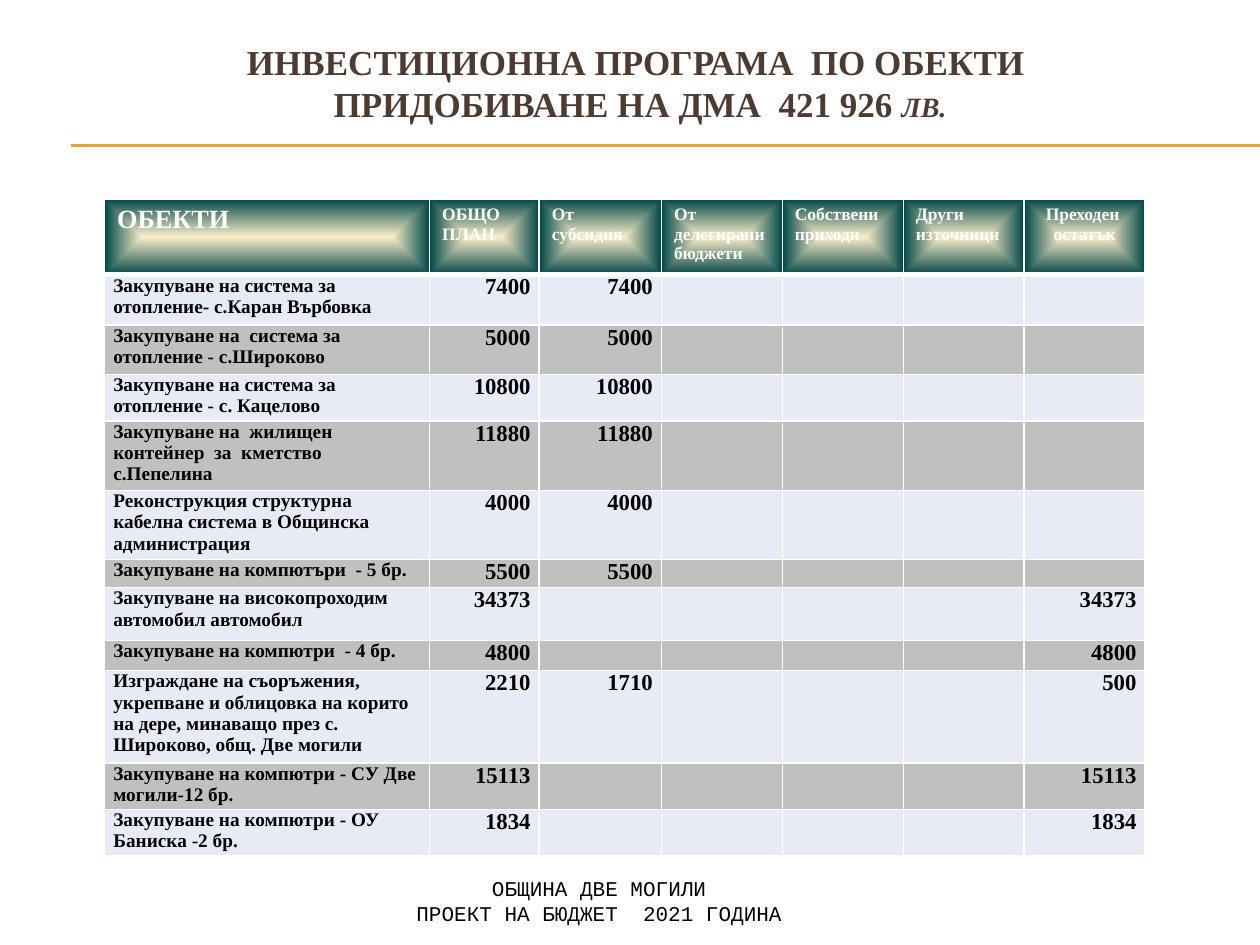
from lxml import etree
from pptx import Presentation
from pptx.dml.color import RGBColor
from pptx.enum.shapes import MSO_CONNECTOR
from pptx.enum.text import MSO_ANCHOR, MSO_AUTO_SIZE, PP_ALIGN
from pptx.oxml import parse_xml
from pptx.oxml.ns import nsdecls, qn
from pptx.util import Inches, Pt

STRAIGHT = MSO_CONNECTOR.STRAIGHT
MIDDLE, BOTTOM = MSO_ANCHOR.MIDDLE, MSO_ANCHOR.BOTTOM
NO_AUTOFIT = MSO_AUTO_SIZE.NONE
LEFT, CENTER, RIGHT = PP_ALIGN.LEFT, PP_ALIGN.CENTER, PP_ALIGN.RIGHT

WHITE = RGBColor(0xFF, 0xFF, 0xFF)
BLACK = RGBColor(0, 0, 0)
BROWN = RGBColor(0x4E, 0x3B, 0x30)
ORANGE = RGBColor(0xF0, 0xA2, 0x2E)
CREAM = RGBColor(0xFB, 0xEE, 0xC9)
TEAL = RGBColor(0x00, 0x47, 0x47)
PALE_BLUE = RGBColor(0xE7, 0xEB, 0xF5)
GRAY = RGBColor(0xC0, 0xC0, 0xC0)

SERIF = "Times New Roman"
MONO = "Courier New"

COLUMN_WIDTHS = [2.58, 0.87, 0.97] + [0.96] * 4
ROW_HEIGHTS = [0.57, 0.4, 0.39, 0.37, 0.33, 0.3, 0.22, 0.42, 0.24, 0.47, 0.24, 0.24]
HEADERS = [
    "ОБЕКТИ", "ОБЩО ПЛАН", "От субсидия", "От делегирани бюджети",
    "Собствени приходи", "Други източници", "Преходен  остатък",
]
PROJECTS = [
    ("Закупуване на система за отопление- с.Каран Върбовка", "7400", "7400", ""),
    ("Закупуване на  система за отопление - с.Широково", "5000", "5000", ""),
    ("Закупуване на система за отопление - с. Кацелово", "10800", "10800", ""),
    ("Закупуване на  жилищен контейнер  за  кметство  с.Пепелина", "11880", "11880", ""),
    ("Реконструкция структурна кабелна система в Общинска администрация", "4000", "4000", ""),
    ("Закупуване на компютъри  - 5 бр.", "5500", "5500", ""),
    ("Закупуване на високопроходим автомобил автомобил", "34373", "", "34373"),
    ("Закупуване на компютри  - 4 бр.", "4800", "", "4800"),
    ("Изграждане на съоръжения, укрепване и облицовка на корито на дере, "
     "минаващо през с. Широково, общ. Две могили", "2210", "1710", "500"),
    ("Закупуване на компютри - СУ Две могили-12 бр.", "15113", "", "15113"),
    ("Закупуване на компютри - ОУ Баниска -2 бр.", "1834", "", "1834"),
]


def add_span(para, text, size, color, font=SERIF, bold=True, italic=False):
    span = para.add_run()
    span.text = text
    span.font.name = font
    span.font.size = Pt(size)
    span.font.bold = bold
    span.font.italic = italic
    span.font.color.rgb = color


def set_margins(target, left, top, right, bottom):
    target.margin_left, target.margin_top = Inches(left), Inches(top)
    target.margin_right, target.margin_bottom = Inches(right), Inches(bottom)


def fill_title(page):
    title = page.shapes.title
    title.left, title.top = Inches(1.08), Inches(0.17)
    title.width, title.height = Inches(8), Inches(0.92)
    frame = title.text_frame
    frame.auto_size = NO_AUTOFIT
    frame.vertical_anchor = MIDDLE
    set_margins(frame, 0, 0.05, 0, 0)
    para = frame.paragraphs[0]
    para.alignment = CENTER
    add_span(para, "ИНВЕСТИЦИОННА ПРОГРАМА  ПО ОБЕКТИ ", 20, BROWN)
    para.add_line_break()
    add_span(para, "ПРИДОБИВАНЕ НА ДМА  421 926 ", 20, BROWN)
    add_span(para, "ЛВ.", 16, BROWN, italic=True)


def add_rule(page, top):
    rule = page.shapes.add_connector(
        STRAIGHT, Inches(0.56), Inches(top), Inches(10), Inches(top))
    rule.line.color.rgb = ORANGE
    rule.line.width = Pt(0.75)
    etree.SubElement(rule._element.spPr, qn("a:effectLst"))


def add_footer(page):
    box = page.shapes.add_textbox(Inches(2.92), Inches(6.95), Inches(3.67), Inches(0.4))
    frame = box.text_frame
    frame.word_wrap = True
    frame.vertical_anchor = BOTTOM
    set_margins(frame, 0, 0, 0, 0)
    for index, text in enumerate(["ОБЩИНА ДВЕ МОГИЛИ", "ПРОЕКТ НА БЮДЖЕТ  2021 ГОДИНА"]):
        para = frame.add_paragraph() if index else frame.paragraphs[0]
        para.alignment = CENTER
        add_span(para, text, 12, BLACK, font=MONO, bold=False)


def set_borders(cell, top=1, bottom=1):
    properties = cell._tc.get_or_add_tcPr()
    for side, width in (("L", 1), ("R", 1), ("T", top), ("B", bottom)):
        properties.append(parse_xml(
            f'<a:ln{side} {nsdecls("a")} w="{Pt(width)}"><a:solidFill>'
            f'<a:srgbClr val="{WHITE}"/></a:solidFill></a:ln{side}>'))


def fill_gradient(cell):
    cell._tc.get_or_add_tcPr().append(parse_xml(
        f'<a:gradFill {nsdecls("a")} rotWithShape="1"><a:gsLst>'
        f'<a:gs pos="0"><a:srgbClr val="{CREAM}"/></a:gs>'
        f'<a:gs pos="100000"><a:srgbClr val="{TEAL}"/></a:gs></a:gsLst>'
        '<a:path path="shape"><a:fillToRect l="50000" t="50000" r="50000" b="50000"/>'
        '</a:path></a:gradFill>'))


def write_cell(cell, text, size, color, alignment):
    para = cell.text_frame.paragraphs[0]
    para.alignment = alignment
    if text:
        add_span(para, text, size, color)
    else:
        para._p.get_or_add_endParaRPr().set("sz", str(size * 100))


def fill_header(table):
    last = len(HEADERS) - 1
    for column, text in enumerate(HEADERS):
        cell = table.cell(0, column)
        set_borders(cell, bottom=3)
        fill_gradient(cell)
        write_cell(cell, text, 10 if column else 15, WHITE, CENTER if column == last else LEFT)


def fill_projects(table):
    for row, (name, total, subsidy, carryover) in enumerate(PROJECTS, start=1):
        for column, text in enumerate([name, total, subsidy, "", "", "", carryover]):
            cell = table.cell(row, column)
            set_margins(cell, 0.07, 0, 0.07, 0)
            set_borders(cell, top=3 if row == 1 else 1)
            cell.fill.solid()
            cell.fill.fore_color.rgb = PALE_BLUE if row % 2 else GRAY
            write_cell(cell, text, 13 if column else 11, BLACK, RIGHT if column else LEFT)


def add_budget_table(page):
    table = page.shapes.add_table(
        len(ROW_HEIGHTS), len(COLUMN_WIDTHS), Inches(0.83), Inches(1.58),
        Inches(sum(COLUMN_WIDTHS)), Inches(sum(ROW_HEIGHTS))).table
    for column, width in zip(table.columns, COLUMN_WIDTHS):
        column.width = Inches(width)
    for row, height in zip(table.rows, ROW_HEIGHTS):
        row.height = Inches(height)
    fill_header(table)
    fill_projects(table)


def main():
    deck = Presentation()
    deck.slide_width, deck.slide_height = Inches(10), Inches(7.5)
    page = deck.slides.add_slide(deck.slide_layouts.get_by_name("Title Only"))
    for top in (1.15, 1.16):
        add_rule(page, top)
    fill_title(page)
    add_footer(page)
    add_budget_table(page)
    deck.save("out.pptx")


if __name__ == "__main__":
    main()
